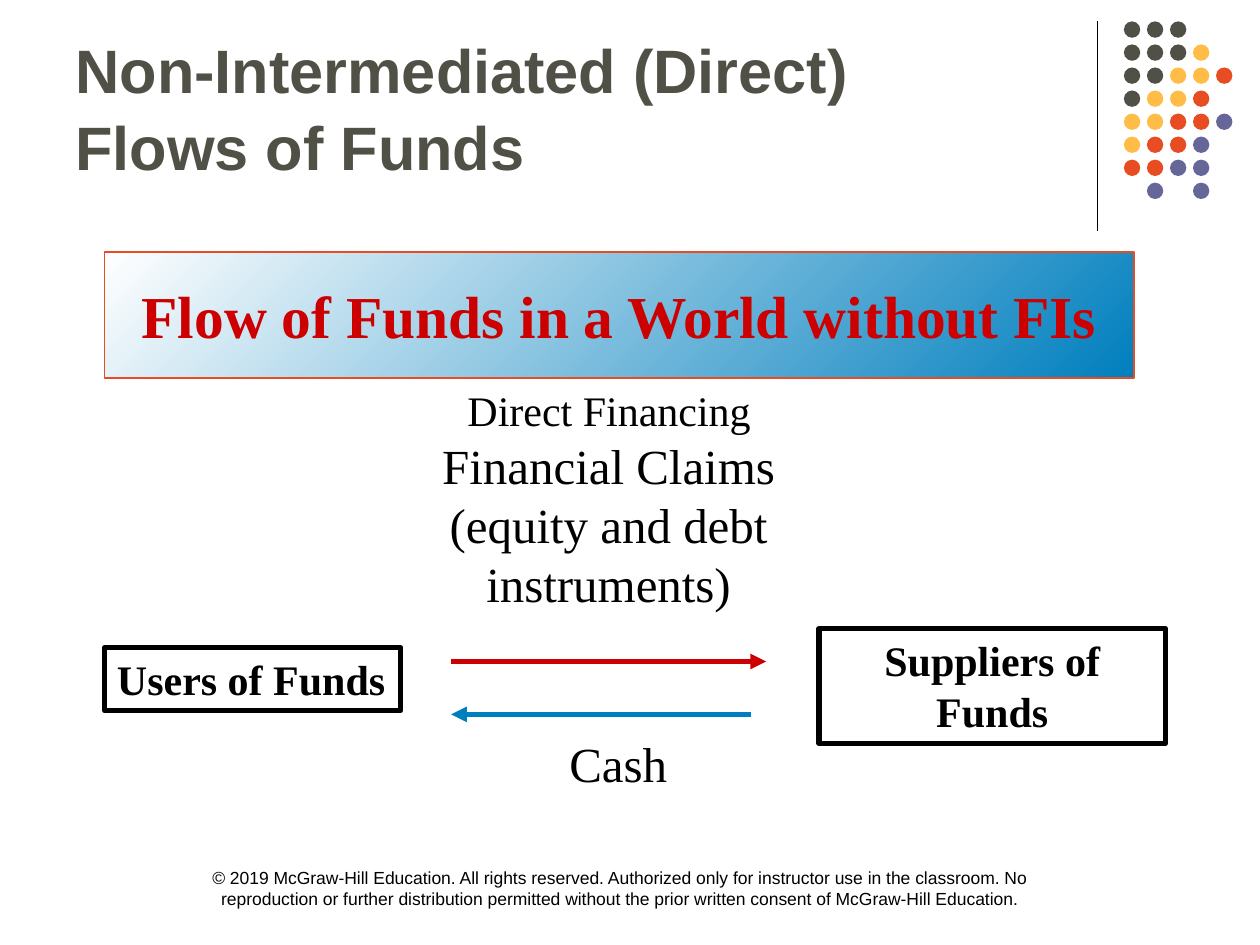
from lxml.etree import SubElement
from pptx import Presentation
from pptx.dml.color import RGBColor
from pptx.enum.shapes import MSO_CONNECTOR as Connector, MSO_SHAPE as Shape
from pptx.enum.text import MSO_ANCHOR as Anchor, PP_ALIGN as Align
from pptx.oxml.ns import qn
from pptx.util import Inches, Pt

COLORS = {
    "black": "000000", "white": "FFFFFF", "gray": "505046", "amber": "FFBD47",
    "orange": "E84C22", "violet": "666699", "red": "CC0000", "blue": "007FBE",
}
SERIF = {"name": "Times New Roman", "color": "black"}
LABEL = {**SERIF, "size": Pt(28)}
PARTY = {**SERIF, "size": Pt(24), "bold": True}
BANNER = {**SERIF, "size": Pt(34), "bold": True, "color": "red"}
TITLE = {"name": "Arial", "size": Pt(35), "bold": True, "color": "gray"}
FOOTER = {"name": "Arial", "size": Pt(10), "color": "black"}

DOT_COLORS = {"g": "gray", "a": "amber", "o": "orange", "v": "violet"}
DOT_ROWS = ["ggg", "ggga", "ggaao", "gaao", "aaoov", "aoov", "oovv", " v v"]


def rgb(name):
    return RGBColor.from_string(COLORS[name])


def write(shape, lines, style, align=Align.CENTER, anchor=Anchor.TOP, wrap=True):
    """Fill a shape with one paragraph for each line."""
    frame = shape.text_frame
    frame.word_wrap = wrap
    frame.vertical_anchor = anchor
    frame.text = "\n".join(lines)
    for para in frame.paragraphs:
        para.alignment = align
        for key, value in style.items():
            if key == "color":
                para.font.color.rgb = rgb(value)
            else:
                setattr(para.font, key, value)
    return frame


def add_text(page, box, lines, style, **layout):
    shape = page.shapes.add_textbox(*map(Inches, box))
    return write(shape, lines, style, **layout)


def add_preset(shapes, kind, box):
    shape = shapes.add_shape(kind, *map(Inches, box))
    shape.shadow.inherit = False
    return shape


def add_line(page, start, end, color, width, arrow=False):
    line = page.shapes.add_connector(Connector.STRAIGHT, *map(Inches, start + end))
    line.line.color.rgb = rgb(color)
    line.line.width = Pt(width)
    if arrow:
        SubElement(line.line._get_or_add_ln(), qn("a:tailEnd"), type="triangle")
    SubElement(line._element.spPr, qn("a:effectLst"))


def add_dots(page, left, top, size, pitch):
    group = page.shapes.add_group_shape()
    for row, codes in enumerate(DOT_ROWS):
        for column, code in enumerate(codes):
            if code == " ":
                continue
            place = (left + column * pitch, top + row * pitch, size, size)
            dot = add_preset(group.shapes, Shape.OVAL, place)
            dot.fill.solid()
            dot.fill.fore_color.rgb = rgb(DOT_COLORS[code])
            dot.line.fill.background()


def add_party(page, box, name, **layout):
    """Outlined box naming one side of the flow."""
    shape = add_preset(page.shapes, Shape.RECTANGLE, box)
    shape.fill.background()
    shape.line.color.rgb = rgb("black")
    shape.line.width = Pt(3)
    write(shape, [name], PARTY, **layout)


def add_banner(page, box, words):
    shape = add_preset(page.shapes, Shape.RECTANGLE, box)
    shape.fill.gradient()
    shape.fill.gradient_angle = 315
    for stop, position, color in zip(shape.fill.gradient_stops, (0, 1), ("white", "blue")):
        stop.position = position
        stop.color.rgb = rgb(color)
    shape.line.color.rgb = rgb("orange")
    shape.line.width = Pt(0.75)
    write(shape, [words], BANNER, anchor=Anchor.MIDDLE)


def add_header(page, box):
    frame = add_text(page, box, ["Non-Intermediated (Direct)\vFlows of Funds"], TITLE,
                     align=Align.LEFT, anchor=Anchor.MIDDLE)
    frame.paragraphs[0].line_spacing = 1.05
    add_line(page, (8.71, 0.17), (8.71, 1.83), "black", 0.75)
    add_dots(page, 8.92, 0.17, size=0.13, pitch=1.28 / 7)


def add_flow(page, left, top):
    """Users and suppliers of funds, with the two flows between them."""
    add_party(page, (left, top + 2.14, 2.35, 0.5), "Users of Funds",
              align=Align.LEFT, wrap=False)
    add_party(page, (left + 5.67, top + 1.99, 2.75, 0.91), "Suppliers of Funds")
    start = left + 2.75
    add_line(page, (start, top + 2.25), (start + 2.5, top + 2.25), "red", 3, arrow=True)
    add_line(page, (start + 2.38, top + 2.67), (start, top + 2.67), "blue", 3, arrow=True)
    add_text(page, (left + 1.34, top, 5.33, 0.5), ["Direct Financing"],
             {**SERIF, "size": Pt(24)})
    add_text(page, (left + 2.41, top + 0.41, 3.18, 1.5),
             ["Financial Claims", "(equity and debt instruments)"], LABEL)
    add_text(page, (left + 3.59, top + 2.77, 1.08, 0.57), ["Cash"], LABEL,
             align=Align.LEFT)


def main():
    deck = Presentation()
    deck.slide_width, deck.slide_height = Inches(10), Inches(7.5)
    page = deck.slides.add_slide(deck.slide_layouts[6])
    add_header(page, (0.5, 0.13, 8.25, 1.42))
    add_banner(page, (0.83, 2, 8.17, 1), "Flow of Funds in a World without FIs")
    add_flow(page, 0.83, 3)
    add_text(page, (1.5, 6.83, 6.83, 0.5), [
        "© 2019 McGraw-Hill Education. All rights reserved. Authorized only for "
        "instructor use in the classroom. No reproduction or further distribution "
        "permitted without the prior written consent of McGraw-Hill Education."], FOOTER)
    deck.save("out.pptx")


if __name__ == "__main__":
    main()
